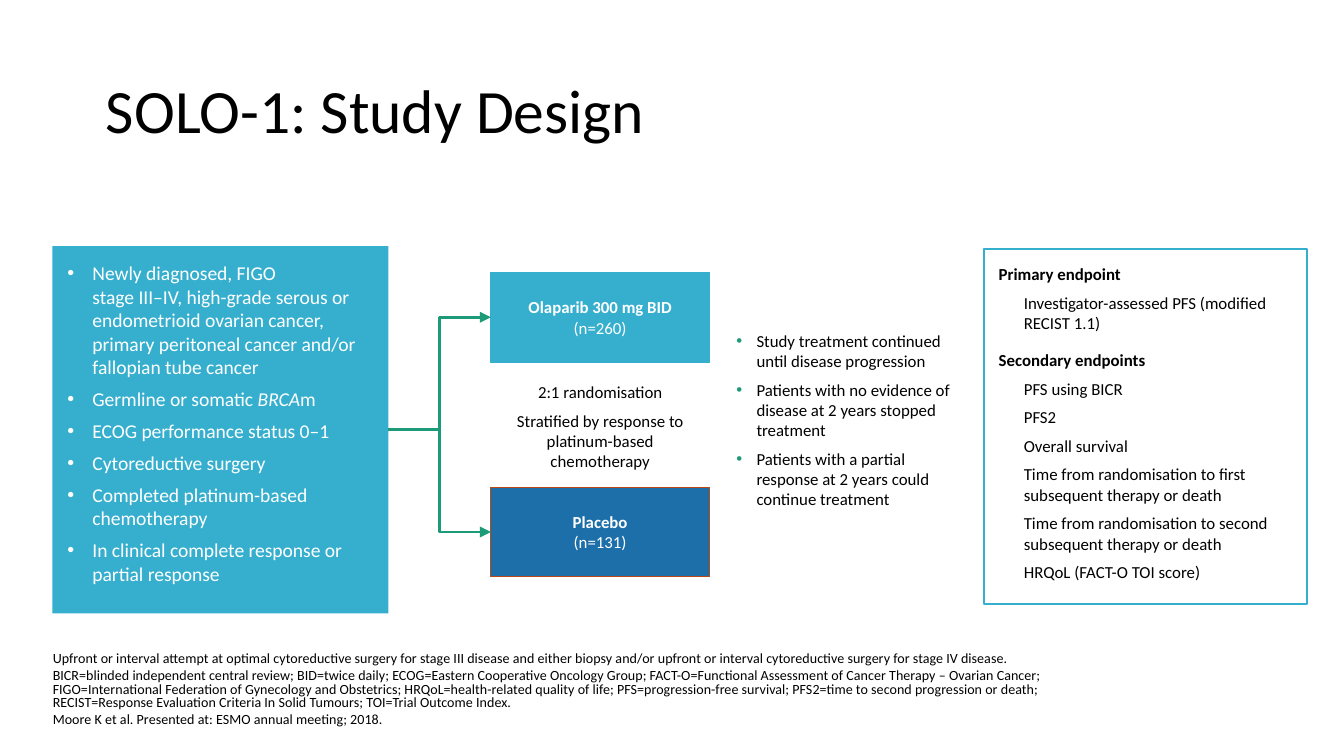
"""Build the SOLO-1 study design slide."""
from copy import deepcopy
from dataclasses import dataclass
from typing import Optional

from lxml.etree import SubElement
from pptx import Presentation
from pptx.dml.color import RGBColor
from pptx.enum.shapes import MSO_CONNECTOR, MSO_SHAPE
from pptx.enum.text import MSO_ANCHOR, PP_ALIGN
from pptx.oxml.ns import qn
from pptx.util import Pt


@dataclass(frozen=True)
class Theme:
    """Colours, font and type sizes."""
    font: str = "Calibri"
    black: str = "000000"
    white: str = "FFFFFF"
    sky: str = "36AFCE"
    blue: str = "1D6FA9"
    rust: str = "B74919"
    green: str = "1D9A78"
    title: float = 33
    large: float = 10.5
    body: float = 9
    note: float = 7.5


@dataclass(frozen=True)
class Run:
    """A piece of text with its emphasis."""
    text: str
    bold: bool = False
    italic: bool = False


@dataclass(frozen=True)
class Para:
    """A paragraph with its space before and indent."""
    runs: tuple[Run, ...]
    gap: float = 4.5
    indent: float = 0
    bullet: Optional[str] = None


@dataclass(frozen=True)
class Box:
    """A block of text, framed when it has a fill."""
    at: tuple[float, float, float, float]
    paras: list[Para]
    size: float
    color: str = Theme.black
    fill: Optional[str] = None
    line: Optional[str] = None
    width: float = 0.5
    inset: tuple[float, float] = (8, 8)
    anchor: MSO_ANCHOR = MSO_ANCHOR.TOP
    align: PP_ALIGN = PP_ALIGN.LEFT
    lead: float = 1


THEME = Theme()


def plain(*texts: str, **form) -> list[Para]:
    """Make one single-run paragraph per text."""
    return [Para((Run(text),), **form) for text in texts]


def head(text: str, gap: float = 4.5) -> Para:
    """Make a bold heading."""
    return Para((Run(text, bold=True),), gap)


def arm(top: float, name: str, count: str, fill: str, line: str) -> Box:
    """Describe one treatment arm."""
    runs = (Run(f"{name}\n", bold=True), Run(count))
    return Box((263, top, 117, 48), [Para(runs)], THEME.body, THEME.white, fill, line,
               anchor=MSO_ANCHOR.MIDDLE, align=PP_ALIGN.CENTER)


def write(para, run: Run, box: Box) -> None:
    """Add a run, turning newlines into line breaks."""
    for i, part in enumerate(run.text.split("\n")):
        if i:
            para._p.add_br().append(deepcopy(piece._r.rPr))
        if not part:
            continue
        piece = para.add_run()
        piece.text = part
        form = {"name": THEME.font, "size": Pt(box.size), "bold": run.bold, "italic": run.italic}
        for key, value in form.items():
            setattr(piece.font, key, value)
        piece.font.color.rgb = RGBColor.from_string(box.color)


def mark(para, item: Para) -> None:
    """Set the indent and bullet of a paragraph."""
    props = para._p.get_or_add_pPr()
    props.set("marL", str(Pt(item.indent)))
    props.set("indent", str(Pt(-item.indent if item.bullet else 0)))
    if item.bullet:
        tint = SubElement(props, qn("a:buClr"))
        SubElement(tint, qn("a:srgbClr")).set("val", item.bullet)
        SubElement(props, qn("a:buFont")).set("typeface", "Arial")
        SubElement(props, qn("a:buChar")).set("char", "•")


def draw(slide, box: Box):
    """Draw a box with its text."""
    spot = [Pt(value) for value in box.at]
    if box.fill:
        shape = slide.shapes.add_shape(MSO_SHAPE.RECTANGLE, *spot)
        shape.shadow.inherit = False
        shape.fill.solid()
        shape.fill.fore_color.rgb = RGBColor.from_string(box.fill)
        if box.line:
            shape.line.color.rgb = RGBColor.from_string(box.line)
            shape.line.width = Pt(box.width)
        else:
            shape.line.fill.background()
    else:
        shape = slide.shapes.add_textbox(*spot)
    frame = shape.text_frame
    side, edge = (Pt(value) for value in box.inset)
    form = {"word_wrap": True, "vertical_anchor": box.anchor, "margin_left": side,
            "margin_right": side, "margin_top": edge, "margin_bottom": edge}
    for key, value in form.items():
        setattr(frame, key, value)
    for i, item in enumerate(box.paras):
        para = frame.add_paragraph() if i else frame.paragraphs[0]
        form = {"alignment": box.align, "line_spacing": box.lead,
                "space_before": Pt(item.gap if i else 0)}
        for key, value in form.items():
            setattr(para, key, value)
        mark(para, item)
        for run in item.runs:
            write(para, run, box)
    return shape


def link(slide, start, end) -> None:
    """Join two shapes with an elbow arrow."""
    line = slide.shapes.add_connector(MSO_CONNECTOR.ELBOW, 0, 0, 0, 0)
    line.begin_connect(start, 3)
    line.end_connect(end, 1)
    line.line.color.rgb = RGBColor.from_string(THEME.green)
    line.line.width = Pt(1.5)
    SubElement(line.line._get_or_add_ln(), qn("a:tailEnd")).set("type", "triangle")
    SubElement(line._element.spPr, qn("a:effectLst"))


TITLE = Box((49.7, 21.6, 620.6, 78.5), plain("SOLO-1: Study Design"), THEME.title,
            inset=(7.2, 3.6), anchor=MSO_ANCHOR.MIDDLE, lead=0.9)

NOTES = Box((28.3, 349.2, 630.7, 40.3), plain(
    "Upfront or interval attempt at optimal cytoreductive surgery for stage III disease and either "
    "biopsy and/or upfront or interval cytoreductive surgery for stage IV disease.",
    "BICR=blinded independent central review; BID=twice daily; ECOG=Eastern Cooperative Oncology "
    "Group; FACT-O=Functional Assessment of Cancer Therapy – Ovarian Cancer;\n"
    "FIGO=International Federation of Gynecology and Obstetrics; HRQoL=health-related quality of "
    "life; PFS=progression-free survival; PFS2=time to second progression or death;\n"
    "RECIST=Response Evaluation Criteria In Solid Tumours; TOI=Trial Outcome Index.",
    "Moore K et al. Presented at: ESMO annual meeting; 2018.", gap=1.8),
    THEME.note, inset=(0, 0), anchor=MSO_ANCHOR.BOTTOM, lead=0.8)

DOT = {"indent": 13.5, "bullet": THEME.white}
ENTRY = Box((28.1, 131.8, 180, 196.8), [
    *plain("Newly diagnosed, FIGO\nstage III–IV, high-grade serous or endometrioid ovarian cancer, "
           "primary peritoneal cancer and/or fallopian tube cancer", **DOT),
    Para((Run("Germline or somatic "), Run("BRCA", italic=True), Run("m")), **DOT),
    *plain("ECOG performance status 0–1", "Cytoreductive surgery",
           "Completed platinum-based chemotherapy",
           "In clinical complete response or partial response", **DOT)],
    THEME.large, THEME.white, THEME.sky)

GOALS = Box((527, 133.3, 173, 190.3), [
    head("Primary endpoint"),
    *plain("Investigator-assessed PFS (modified RECIST 1.1)", indent=13.5),
    head("Secondary endpoints", 9),
    *plain("PFS using BICR", "PFS2", "Overall survival",
           "Time from randomisation to first subsequent therapy or death",
           "Time from randomisation to second subsequent therapy or death",
           "HRQoL (FACT-O TOI score)", indent=13.5)],
    THEME.body, fill=THEME.white, line=THEME.sky, width=1)

COURSE = Box((387.4, 173.5, 133.9, 104.4), plain(
    "Study treatment continued until disease progression",
    "Patients with no evidence of disease at 2 years stopped treatment",
    "Patients with a partial response at 2 years could continue treatment",
    indent=10.8, bullet=THEME.green), THEME.body, inset=(7.2, 3.6))

SPLIT = Box((263, 200.9, 117, 56.2), plain(
    "2:1 randomisation", "Stratified by response to platinum-based chemotherapy"),
    THEME.body, inset=(7.2, 3.6), align=PP_ALIGN.CENTER)

ARMS = [arm(146, "Olaparib 300 mg BID", "(n=260)", THEME.sky, THEME.sky),
        arm(261, "Placebo", "(n=131)", THEME.blue, THEME.rust)]


def main() -> None:
    """Build and save the slide."""
    deck = Presentation()
    deck.slide_width, deck.slide_height = Pt(720), Pt(405)
    slide = deck.slides.add_slide(deck.slide_layouts[6])
    for box in (TITLE, NOTES, GOALS, COURSE, SPLIT):
        draw(slide, box)
    entry = draw(slide, ENTRY)
    for box in ARMS:
        link(slide, entry, draw(slide, box))
    deck.save("out.pptx")


if __name__ == "__main__":
    main()
